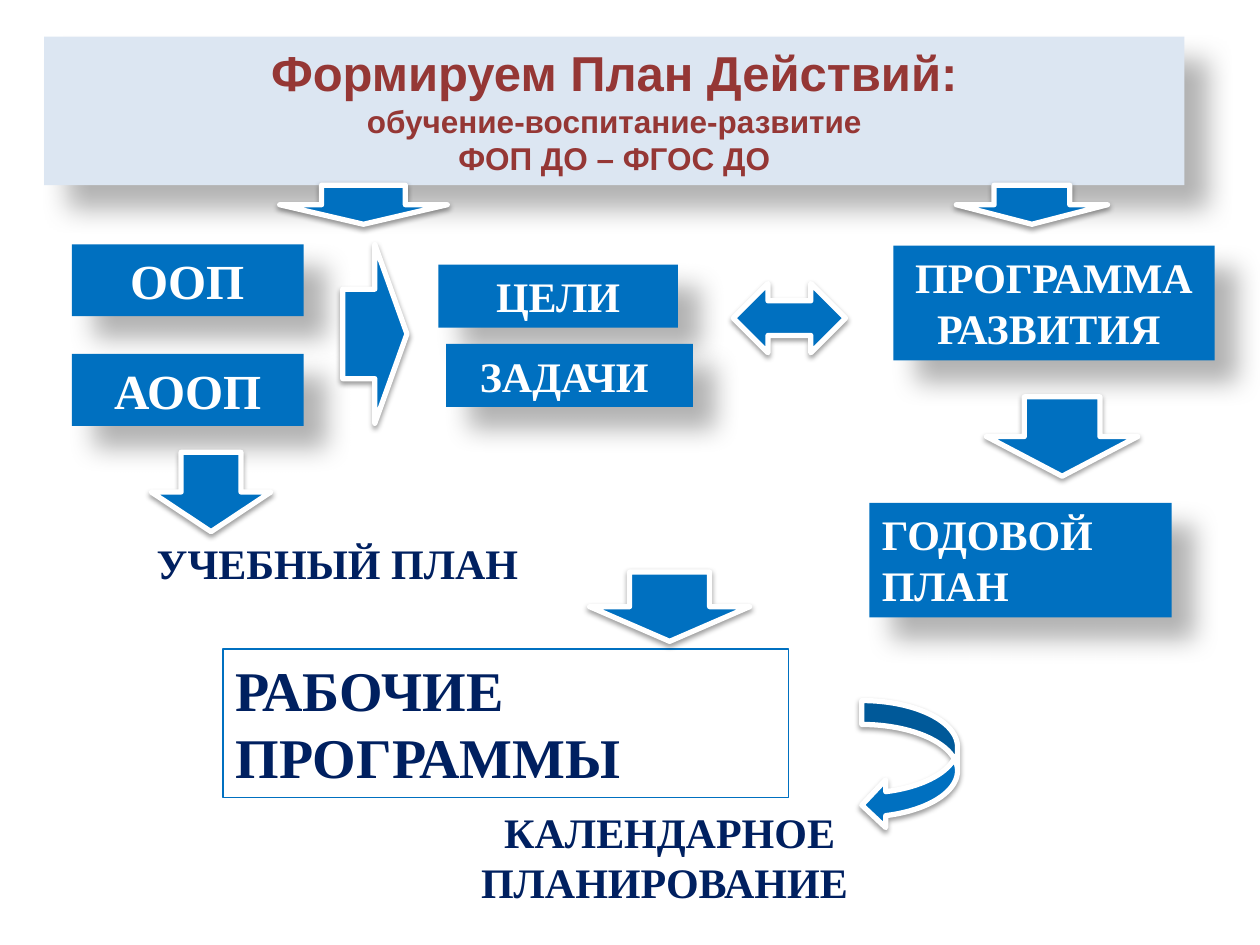
from lxml.etree import SubElement
from pptx import Presentation
from pptx.dml.color import RGBColor
from pptx.enum.shapes import MSO_SHAPE
from pptx.enum.text import MSO_ANCHOR, MSO_AUTO_SIZE, PP_ALIGN
from pptx.oxml.ns import qn
from pptx.util import Inches, Pt

BLUE = RGBColor(0x00, 0x70, 0xC0)
NAVY = RGBColor(0x00, 0x20, 0x60)
PALE_BLUE = RGBColor(0xDC, 0xE6, 0xF2)
DARK_RED = RGBColor(0x95, 0x37, 0x35)
WHITE = RGBColor(0xFF, 0xFF, 0xFF)

# Shadows: opacity %, blur pt, distance pt, direction in degrees
BOX_SHADOW = (30, 15, 18, 45)
ARROW_SHADOW = (38, 3.1, 1.6, 90)


def add_shadow(shape, opacity, blur, distance, direction):
    effects = shape._element.spPr.find(qn("a:effectLst"))
    shadow = SubElement(effects, qn("a:outerShdw"), blurRad=str(Pt(blur)),
                        dist=str(Pt(distance)), dir=str(direction * 60000),
                        algn="tl", rotWithShape="0")
    color = SubElement(shadow, qn("a:srgbClr"), val="000000")
    SubElement(color, qn("a:alpha"), val=str(opacity * 1000))


def write_text(shape, lines, color, font_name="Times New Roman", align=PP_ALIGN.CENTER):
    """Fill a shape with bold (text, size) lines."""
    frame = shape.text_frame
    frame.word_wrap = True
    frame.auto_size = MSO_AUTO_SIZE.SHAPE_TO_FIT_TEXT
    frame.vertical_anchor = MSO_ANCHOR.TOP
    for index, (text, size) in enumerate(lines):
        paragraph = frame.add_paragraph() if index else frame.paragraphs[0]
        paragraph.text = text
        paragraph.alignment = align
        paragraph.font.name = font_name
        paragraph.font.size = Pt(size)
        paragraph.font.bold = True
        paragraph.font.color.rgb = color


def add_plain_shape(slide, kind, place, fill=None):
    shape = slide.shapes.add_shape(kind, *map(Inches, place))
    shape.shadow.inherit = False
    if fill is None:
        shape.fill.background()
    else:
        shape.fill.solid()
        shape.fill.fore_color.rgb = fill
    return shape


def add_box(slide, place, lines, fill=BLUE, color=WHITE, **text_style):
    box = add_plain_shape(slide, MSO_SHAPE.RECTANGLE, place, fill)
    box.line.fill.background()
    add_shadow(box, *BOX_SHADOW)
    write_text(box, lines, color, **text_style)


def add_outlined_box(slide, place, lines):
    box = add_plain_shape(slide, MSO_SHAPE.RECTANGLE, place)
    box.line.color.rgb = BLUE
    box.line.width = Pt(0.75)
    write_text(box, lines, NAVY, align=PP_ALIGN.LEFT)


def add_label(slide, place, text):
    label = slide.shapes.add_textbox(*map(Inches, place))
    write_text(label, [(text, 24)], NAVY)


def add_arrow(slide, kind, place):
    arrow = add_plain_shape(slide, kind, place, BLUE)
    arrow.line.color.rgb = WHITE
    arrow.line.width = Pt(3)
    add_shadow(arrow, *ARROW_SHADOW)


def main():
    prs = Presentation()
    prs.slide_width, prs.slide_height = Inches(10), Inches(7.5)
    slide = prs.slides.add_slide(prs.slide_layouts[6])

    # Heading
    add_box(slide, (0.35, 0.29, 9.05, 1.18),
            [("Формируем План Действий:", 28),
             ("обучение-воспитание-развитие", 18),
             ("ФОП ДО – ФГОС ДО", 18)],
            fill=PALE_BLUE, color=DARK_RED, font_name="Arial")

    # Programmes, goals and plans
    for place, text, size in (
        ((3.48, 2.1, 1.9, 0.5), "ЦЕЛИ", 24),
        ((3.54, 2.73, 1.96, 0.5), "ЗАДАЧИ ", 24),
        ((0.57, 1.94, 1.84, 0.57), "ООП", 28),
        ((0.57, 2.81, 1.84, 0.57), "АООП", 28),
        ((7.09, 1.95, 2.55, 0.91), "ПРОГРАММА РАЗВИТИЯ ", 24),
    ):
        add_box(slide, place, [(text, size)])
    add_box(slide, (6.9, 3.99, 2.4, 0.91), [("ГОДОВОЙ ПЛАН", 24)], align=PP_ALIGN.LEFT)

    # Working programmes and planning labels
    add_outlined_box(slide, (1.77, 5.15, 4.49, 1.18), [("РАБОЧИЕ ПРОГРАММЫ", 32)])
    add_label(slide, (2.91, 6.35, 4.81, 0.91), "КАЛЕНДАРНОЕ ПЛАНИРОВАНИЕ ")
    add_label(slide, (0.57, 4.22, 4.3, 0.5), "УЧЕБНЫЙ ПЛАН ")

    # Arrows between the stages
    for place in (
        (2.22, 1.47, 1.33, 0.31),
        (7.59, 1.47, 1.2, 0.31),
        (1.2, 3.59, 0.95, 0.63),
        (7.83, 3.15, 1.2, 0.63),
        (4.68, 4.54, 1.27, 0.55),
    ):
        add_arrow(slide, MSO_SHAPE.DOWN_ARROW, place)
    add_arrow(slide, MSO_SHAPE.RIGHT_ARROW, (2.72, 1.94, 0.51, 1.42))
    add_arrow(slide, MSO_SHAPE.LEFT_RIGHT_ARROW, (5.82, 2.25, 0.89, 0.55))
    add_arrow(slide, MSO_SHAPE.CURVED_LEFT_ARROW, (6.84, 5.56, 0.76, 1.02))

    prs.save("out.pptx")


if __name__ == "__main__":
    main()
